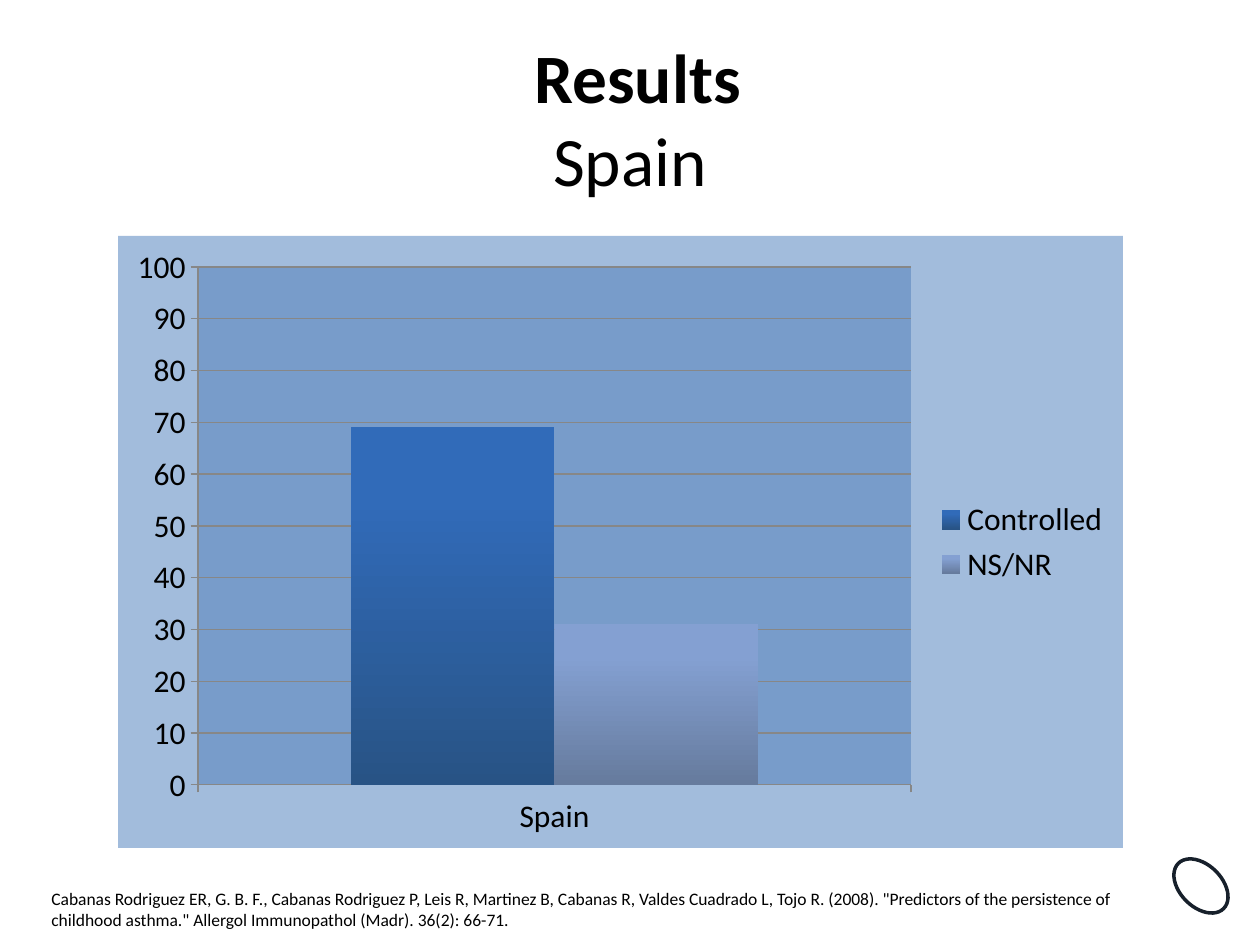
import lxml.etree
import pptx
import pptx.chart.data
import pptx.dml.color
import pptx.enum.chart
import pptx.enum.shapes
import pptx.enum.text
import pptx.oxml
import pptx.oxml.ns
import pptx.util

PX = 914400 / 126
FONT = "Calibri"
COLORS = {
    "text": "000000",
    "white": "FFFFFF",
    "ring": "17202B",
    "chart": "A2BCDC",
    "plot": "789CCA",
    "grid": "878787",
}
SERIES = [
    ("Controlled", 69, "316BB9", "285385"),
    ("NS/NR", 31, "84A0D2", "667B9D"),
]


def px(n):
    return pptx.util.Emu(round(n * PX))


def rgb(value):
    return pptx.dml.color.RGBColor.from_string(value)


def style_font(font, size, bold=False):
    font.name = FONT
    font.size = pptx.util.Pt(size)
    font.bold = bold
    font.color.rgb = rgb(COLORS["text"])


def add_text(s, box, text, size, align, anchor):
    tf = s.shapes.add_textbox(*map(px, box)).text_frame
    tf.word_wrap = True
    tf.vertical_anchor = anchor
    p = tf.paragraphs[0]
    p.text = text
    p.alignment = align
    for r in p.runs:
        style_font(r.font, size)
    return p


def add_title(s, box):
    p = add_text(s, box, " Results\vSpain", 39.6,
                 pptx.enum.text.PP_ALIGN.CENTER, pptx.enum.text.MSO_ANCHOR.MIDDLE)
    p.runs[0].font.bold = True


def add_citation(s, box):
    text = ("Cabanas Rodriguez ER, G. B. F., Cabanas Rodriguez P, Leis R, Martinez B, "
            "Cabanas R, Valdes Cuadrado L, Tojo R. (2008). \"Predictors of the persistence "
            "of childhood asthma.\" Allergol Immunopathol (Madr). 36(2): 66-71.")
    add_text(s, box, text, 10, pptx.enum.text.PP_ALIGN.LEFT, pptx.enum.text.MSO_ANCHOR.TOP)


def add_ring(s, box):
    sp = s.shapes.add_shape(pptx.enum.shapes.MSO_SHAPE.OVAL, *map(px, box))
    sp.rotation = 45
    sp.shadow.inherit = False
    sp.fill.solid()
    sp.fill.fore_color.rgb = rgb(COLORS["white"])
    sp.line.color.rgb = rgb(COLORS["ring"])
    sp.line.width = pptx.util.Pt(2)


def fill_area(parent, color, before):
    xml = (f'<c:spPr {pptx.oxml.ns.nsdecls("c", "a")}><a:solidFill><a:srgbClr val="{color}"/>'
           '</a:solidFill><a:ln><a:noFill/></a:ln></c:spPr>')
    area = pptx.oxml.parse_xml(xml)
    if before is None:
        parent.append(area)
    else:
        before.addprevious(area)


def place_plot(plot_area, box, inner):
    left, top, width, height = box
    x, y, w, h = inner
    values = {"x": x / width, "y": y / height, "w": w / width, "h": h / height}
    for old in plot_area.findall(pptx.oxml.ns.qn("c:layout")):
        plot_area.remove(old)
    parts = "".join(f'<c:{k} val="{v:.4f}"/>' for k, v in values.items())
    plot_area.insert(0, pptx.oxml.parse_xml(
        f'<c:layout {pptx.oxml.ns.nsdecls("c")}><c:manualLayout>'
        '<c:layoutTarget val="inner"/><c:xMode val="edge"/><c:yMode val="edge"/>'
        f'{parts}</c:manualLayout></c:layout>'))


def add_results_chart(s, box):
    data = pptx.chart.data.CategoryChartData()
    data.categories = ["Spain"]
    for name, value, _, _ in SERIES:
        data.add_series(name, [value])
    chart = s.shapes.add_chart(pptx.enum.chart.XL_CHART_TYPE.COLUMN_CLUSTERED,
                               *map(px, box), data).chart
    style_font(chart.font, 18)
    chart.has_title = False
    chart.has_legend = True
    chart.legend.position = pptx.enum.chart.XL_LEGEND_POSITION.RIGHT
    chart.legend.include_in_layout = False
    style_font(chart.legend.font, 18)

    plot = chart.plots[0]
    plot.gap_width = 150
    plot.overlap = 0
    plot.vary_by_categories = False
    for series, (_, _, top, bottom) in zip(plot.series, SERIES):
        fill = series.format.fill
        fill.gradient()
        fill.gradient_angle = 270
        for stop, color, position in zip(fill.gradient_stops, (top, bottom), (0.2, 1)):
            stop.color.rgb = rgb(color)
            stop.position = position

    axis = chart.value_axis
    axis.minimum_scale, axis.maximum_scale, axis.major_unit = 0, 100, 10
    axis.has_major_gridlines = True
    for line in (axis.major_gridlines.format.line, axis.format.line,
                 chart.category_axis.format.line):
        line.color.rgb = rgb(COLORS["grid"])
        line.width = pptx.util.Pt(0.75)
    for item in (axis, chart.category_axis):
        item.major_tick_mark = pptx.enum.chart.XL_TICK_MARK.OUTSIDE
        style_font(item.tick_labels.font, 18)

    space = chart.element
    plot_area = space.chart.plotArea
    place_plot(plot_area, box, (80, 31, 713, 518))
    fill_area(plot_area, COLORS["plot"], None)
    fill_area(space, COLORS["chart"], space.find(pptx.oxml.ns.qn("c:txPr")))


def main():
    prs = pptx.Presentation()
    prs.slide_width, prs.slide_height = px(1260), px(945)
    s = prs.slides.add_slide(prs.slide_layouts[6])
    add_title(s, (63, 38, 1134, 158))
    add_citation(s, (39, 882, 1103, 55))
    add_ring(s, (1169, 865, 64, 42))
    add_results_chart(s, (118, 236, 1005, 612))
    prs.save("out.pptx")


if __name__ == "__main__":
    main()
